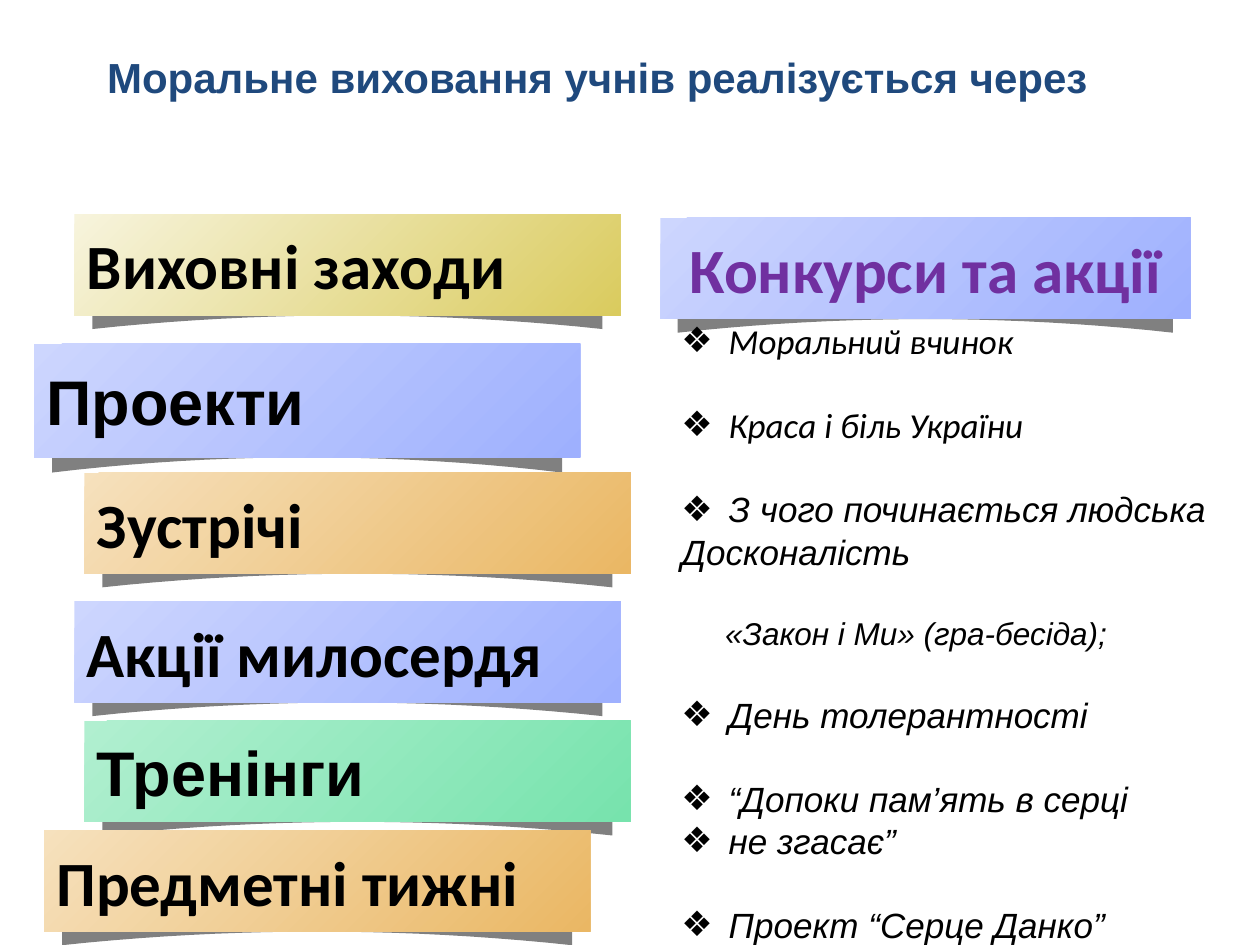
from dataclasses import dataclass

from lxml import etree
from pptx import Presentation
from pptx import util as u
from pptx.dml.color import RGBColor
from pptx.enum import shapes, text
from pptx.oxml.ns import qn

Pt = u.Pt
LEFT, MID = text.PP_ALIGN.LEFT, text.PP_ALIGN.CENTER


@dataclass(frozen=True)
class Theme:
    navy: str = "1F497D"
    black: str = "000000"
    plum: str = "7030A0"
    gray: str = "808080"
    gold: tuple = ("F7F4DD", "DACB5E")
    blue: tuple = ("CDD6FE", "9EB0FE")
    amber: tuple = ("F6E1BD", "EAB764")
    green: tuple = ("B1EFD0", "77E3AD")
    sans: str = "Arial"
    body: str = "Calibri"
    head: int = 24
    label: int = 36
    item: int = 20
    small: int = 18


class Deck:
    def __init__(self, theme):
        self.theme = theme
        self.prs = Presentation()
        self.prs.slide_width, self.prs.slide_height = Pt(720), Pt(540)
        self.slide = self.prs.slides.add_slide(self.prs.slide_layouts[5])

    def label(self, par, words, color, align=LEFT, **form):
        par.alignment = align
        run = par.add_run()
        run.text = words
        for key, val in form.items():
            setattr(run.font, key, val)
        run.font.color.rgb = RGBColor.from_string(color)

    def frame(self, shape, anchor):
        body = shape.text_frame
        form = {"word_wrap": True, "vertical_anchor": anchor,
                "auto_size": text.MSO_AUTO_SIZE.NONE}
        for key, val in form.items():
            setattr(body, key, val)
        return body

    def title(self, words, left, top, width, height):
        t = self.theme
        box = self.slide.shapes.title
        box.left, box.top, box.width, box.height = map(Pt, (left, top, width, height))
        body = self.frame(box, text.MSO_ANCHOR.TOP)
        self.label(body.paragraphs[0], words, t.navy,
                   name=t.sans, size=Pt(t.head), bold=True)

    def shade(self, left, top, width, height, steps=20):
        """Curled shadow: peaked top edge, lower edge bowed as a parabola."""
        bow = 0.28
        edge = [(1 - n / steps, 1 - bow * 4 * n / steps * (1 - n / steps))
                for n in range(steps + 1)]
        outline = edge + [(0, 0.25), (0.5, 0), (1, 0.25)]
        pts = [(Pt(left + x * width), Pt(top + y * height)) for x, y in outline]
        pen = self.slide.shapes.build_freeform(*pts[0])
        pen.add_line_segments(pts[1:], close=True)
        shape = pen.convert_to_shape()
        shape.shadow.inherit = False
        shape.fill.solid()
        shape.fill.fore_color.rgb = RGBColor.from_string(self.theme.gray)
        shape.line.fill.background()

    def bar(self, words, left, top, tones, width=312, height=57.8,
            font=None, color=None, align=LEFT):
        t = self.theme
        self.shade(left + 0.033 * width, top + 0.655 * height,
                   0.934 * width, 0.48 * height)
        shape = self.slide.shapes.add_shape(
            shapes.MSO_SHAPE.RECTANGLE, *map(Pt, (left, top, width, height)))
        shape.shadow.inherit = False
        shape.line.fill.background()
        shape.fill.gradient()
        shape.fill.gradient_angle = 315
        for stop, tone, place in zip(shape.fill.gradient_stops, tones, (0, 1)):
            stop.color.rgb = RGBColor.from_string(tone)
            stop.position = place
        body = self.frame(shape, text.MSO_ANCHOR.MIDDLE)
        self.label(body.paragraphs[0], words, color or t.black, align,
                   name=font or t.body, size=Pt(t.label), bold=True)

    def indent(self, par, left, mark):
        props = par._p.get_or_add_pPr()
        props.set("marL", str(Pt(left)))
        props.set("indent", str(Pt(-left if mark else 0)))
        if mark:
            etree.SubElement(props, qn("a:buFont")).set("typeface", self.theme.sans)
            etree.SubElement(props, qn("a:buChar")).set("char", mark)
        else:
            etree.SubElement(props, qn("a:buNone"))

    def items(self, rows, left, top, width, height):
        """Each row: words, font, size, left indent, bullet, space before."""
        box = self.slide.shapes.add_textbox(*map(Pt, (left, top, width, height)))
        body = self.frame(box, text.MSO_ANCHOR.TOP)
        for n, (words, font, size, inset, mark, gap) in enumerate(rows):
            par = body.add_paragraph() if n else body.paragraphs[0]
            self.indent(par, inset, mark)
            if gap:
                par.space_before = Pt(gap)
            self.label(par, words, self.theme.black,
                       name=font, size=Pt(size), italic=True)


def main():
    t = Theme()
    deck = Deck(t)
    deck.title("Моральне виховання учнів реалізується через", 54, 26, 607, 36)

    deck.bar("Виховні заходи", 42.5, 122.4, t.gold)
    deck.bar("Проекти", 19.5, 196.5, t.blue, height=64.8, font=t.sans)
    deck.bar("Зустрічі", 48.2, 270, t.amber)
    deck.bar("Акції милосердя", 42.5, 343.6, t.blue)
    deck.bar("Тренінги", 48.2, 411.8, t.green, font=t.sans)
    deck.bar("Предметні тижні", 25.2, 474.5, t.amber)
    deck.bar("Конкурси та акції", 377.3, 124.5, t.blue, width=303,
             color=t.plum, align=MID)

    mark, hang, gap = "❖", 27, 24
    deck.items([
        ("Моральний вчинок", t.body, t.item, hang, mark, 0),
        ("Краса і біль України", t.body, t.item, hang, mark, gap),
        ("З чого починається людська", t.sans, t.item, hang, mark, gap),
        ("Досконалість", t.sans, t.item, 0, None, 0),
        ("«Закон і Ми» (гра-бесіда);", t.sans, t.small, 25, None, gap),
        ("День толерантності", t.sans, t.item, hang, mark, gap),
        ("“Допоки пам’ять в серці", t.sans, t.item, hang, mark, gap),
        ("не згасає”", t.sans, t.item, hang, mark, 0),
        ("Проект “Серце Данко”", t.sans, t.item, hang, mark, gap),
    ], 382.3, 179.3, 320, 365)
    deck.prs.save("out.pptx")


if __name__ == "__main__":
    main()
